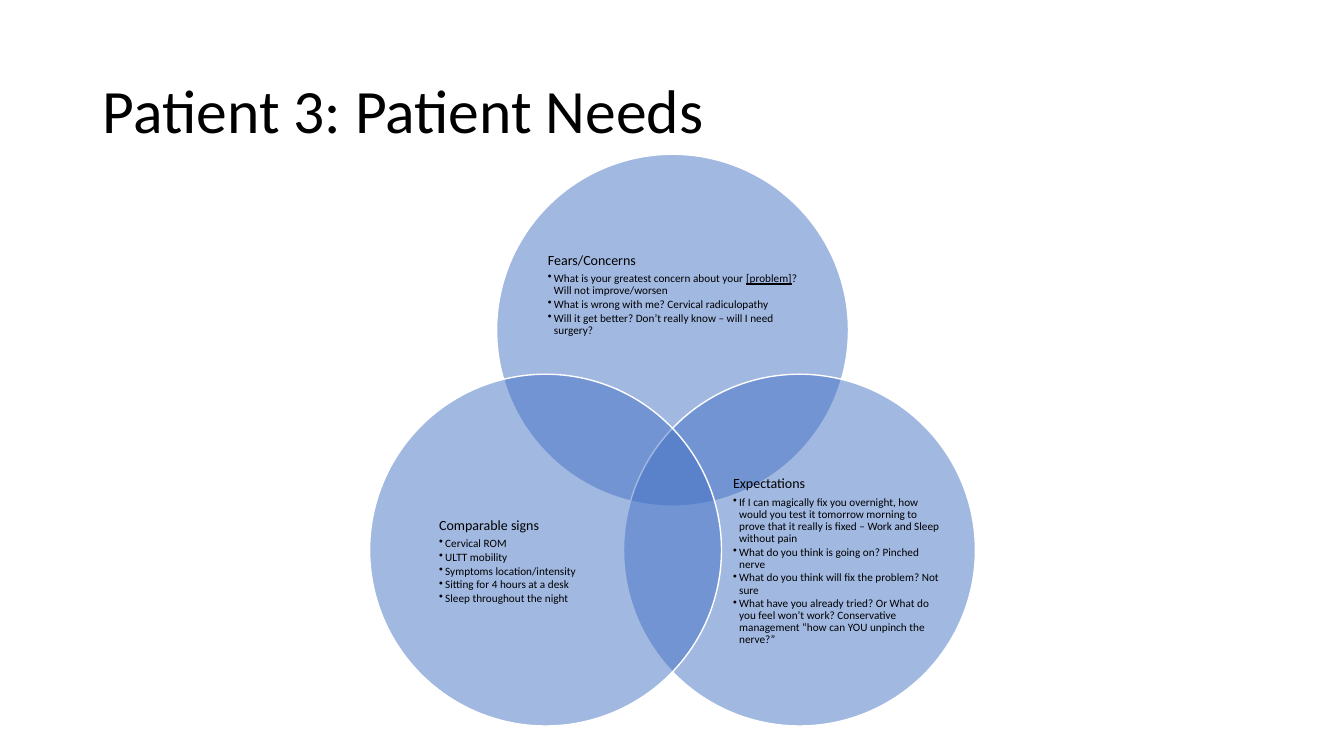
"""Builds the Patient 3 needs slide: a title over a three-circle Venn diagram."""
import math
from dataclasses import dataclass

from lxml import etree
from pptx import Presentation
from pptx import util as u
from pptx.dml import color
from pptx.enum import shapes, text
from pptx.oxml import ns


@dataclass(frozen=True)
class Theme:
    font: str = "Calibri"
    ink: color.RGBColor = color.RGBColor(0x00, 0x00, 0x00)
    circle_fill: color.RGBColor = color.RGBColor(0x44, 0x72, 0xC4)
    outline: color.RGBColor = color.RGBColor(0xFF, 0xFF, 0xFF)
    circle_opacity: float = 0.5
    title_size: float = 44
    heading_size: float = 10
    bullet_size: float = 8
    line_spacing: float = 0.9
    heading_gap: float = 0.35
    bullet_gap: float = 0.15
    bullet_indent: float = 0.06


@dataclass(frozen=True)
class Bullet:
    start: str
    underlined: str = ""
    end: str = ""


@dataclass(frozen=True)
class Need:
    heading: str
    angle: float
    text_box: tuple[float, float, float, float]
    bullets: tuple[Bullet, ...]


THEME = Theme()
DIAMETER = 3.49
VENN_CENTER = (6.67, 4.73)
CENTER_DISTANCE = DIAMETER * 5 / 12

NEEDS = (
    Need("Fears/Concerns", -90, (5.39, 2.14, 2.56, 1.57), (
        Bullet("What is your greatest concern about your ", "[problem]",
               "? Will not improve/worsen"),
        Bullet("What is wrong with me? Cervical radiculopathy"),
        Bullet("Will it get better? Don’t really know – will I need surgery?"),
    )),
    Need("Expectations", 30, (7.25, 4.61, 2.09, 1.92), (
        Bullet("If I can magically fix you overnight, how would you test it tomorrow "
               "morning to prove that it really is fixed – Work and Sleep without pain"),
        Bullet("What do you think is going on? Pinched nerve"),
        Bullet("What do you think will fix the problem? Not sure"),
        Bullet("What have you already tried? Or What do you feel won’t work? "
               "Conservative management “how can YOU unpinch the nerve?”"),
    )),
    Need("Comparable signs", 150, (3.99, 4.61, 2.09, 1.92), (
        Bullet("Cervical ROM"),
        Bullet("ULTT mobility"),
        Bullet("Symptoms location/intensity"),
        Bullet("Sitting for 4 hours at a desk"),
        Bullet("Sleep throughout the night"),
    )),
)


def format_paragraph(paragraph, size: float, gap: float = 0) -> None:
    """Apply the theme font, line spacing and a gap relative to the type size."""
    paragraph.alignment = text.PP_ALIGN.LEFT
    paragraph.line_spacing = THEME.line_spacing
    paragraph.space_after = u.Pt(size * gap)
    for run in paragraph.runs:
        run.font.name = THEME.font
        run.font.size = u.Pt(size)
        run.font.color.rgb = THEME.ink


def add_title(slide, wording: str) -> None:
    """Place and format the title placeholder."""
    title = slide.shapes.title
    title.left, title.top = u.Inches(0.92), u.Inches(0.4)
    title.width, title.height = u.Inches(11.5), u.Inches(1.45)
    title.text_frame.text = wording
    title.text_frame.vertical_anchor = text.MSO_ANCHOR.MIDDLE
    format_paragraph(title.text_frame.paragraphs[0], THEME.title_size)


def add_circle(group, need: Need) -> None:
    """Draw one translucent circle at its angle around the diagram centre."""
    angle = math.radians(need.angle)
    left = VENN_CENTER[0] + CENTER_DISTANCE * math.cos(angle) - DIAMETER / 2
    top = VENN_CENTER[1] + CENTER_DISTANCE * math.sin(angle) - DIAMETER / 2
    circle = group.shapes.add_shape(
        shapes.MSO_SHAPE.OVAL, u.Inches(left), u.Inches(top),
        u.Inches(DIAMETER), u.Inches(DIAMETER))
    circle.shadow.inherit = False
    circle.fill.solid()
    circle.fill.fore_color.rgb = THEME.circle_fill
    fill_color = circle.element.spPr.find(ns.qn("a:solidFill"))[0]
    opacity = etree.SubElement(fill_color, ns.qn("a:alpha"))
    opacity.set("val", str(int(THEME.circle_opacity * 100000)))
    circle.line.color.rgb = THEME.outline
    circle.line.width = u.Pt(1)


def add_bullet(frame, bullet: Bullet) -> None:
    """Append one bulleted paragraph with an optional underlined part."""
    paragraph = frame.add_paragraph()
    paragraph.level = 1
    paragraph.text = bullet.start
    if bullet.underlined:
        underlined = paragraph.add_run()
        underlined.text = bullet.underlined
        underlined.font.underline = True
        paragraph.add_run().text = bullet.end
    format_paragraph(paragraph, THEME.bullet_size, THEME.bullet_gap)
    properties = paragraph._p.get_or_add_pPr()
    properties.set("marL", str(u.Inches(THEME.bullet_indent)))
    properties.set("indent", str(u.Inches(-THEME.bullet_indent)))
    etree.SubElement(properties, ns.qn("a:buChar")).set("char", "•")


def add_need_text(group, need: Need) -> None:
    """Write a heading and its bullets as a block centred in its text box."""
    frame = group.shapes.add_textbox(*map(u.Inches, need.text_box)).text_frame
    frame.word_wrap = True
    frame.vertical_anchor = text.MSO_ANCHOR.MIDDLE
    frame.margin_left = frame.margin_right = u.Inches(0)
    frame.margin_top = frame.margin_bottom = u.Inches(0)
    frame._txBody.bodyPr.set("anchorCtr", "1")
    frame.text = need.heading
    format_paragraph(frame.paragraphs[0], THEME.heading_size, THEME.heading_gap)
    for bullet in need.bullets:
        add_bullet(frame, bullet)


def main() -> None:
    """Build and save the presentation."""
    presentation = Presentation()
    presentation.slide_width = u.Inches(13.33)
    presentation.slide_height = u.Inches(7.5)
    slide = presentation.slides.add_slide(presentation.slide_layouts[5])
    add_title(slide, "Patient 3: Patient Needs")
    venn = slide.shapes.add_group_shape()
    for need in NEEDS:
        add_circle(venn, need)
        add_need_text(venn, need)
    presentation.save("out.pptx")


if __name__ == "__main__":
    main()
